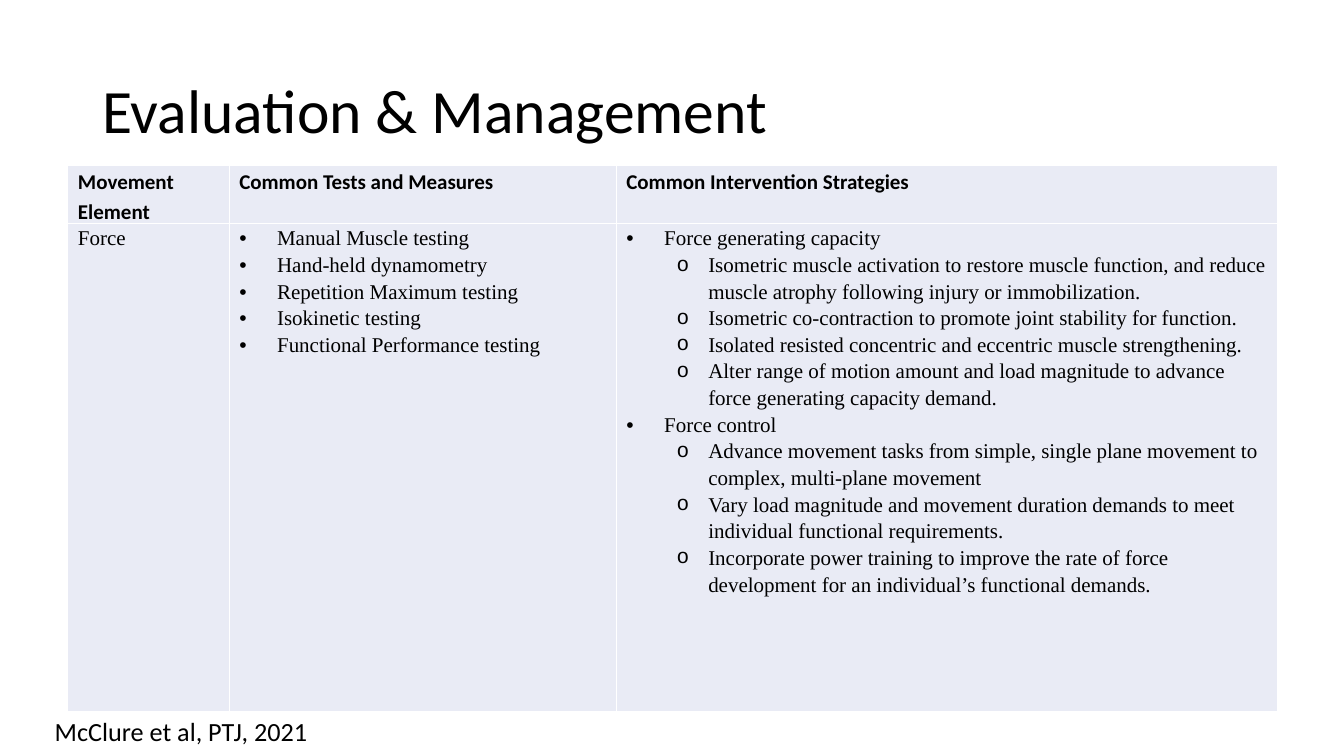
import dataclasses

import lxml.etree
import pptx
import pptx.dml.color
import pptx.enum.text
import pptx.oxml.ns
import pptx.util

Pt = pptx.util.Pt
BLACK = pptx.dml.color.RGBColor(0x00, 0x00, 0x00)
WHITE = pptx.dml.color.RGBColor(0xFF, 0xFF, 0xFF)
PALE_BLUE = pptx.dml.color.RGBColor(0xE9, 0xEB, 0xF5)
SANS = "Calibri"
SERIF = "Times New Roman"


@dataclasses.dataclass(frozen=True)
class Bullet:
    level: int
    symbol: str
    font: str
    margin: float
    hanging: float


@dataclasses.dataclass(frozen=True)
class Line:
    text: str
    bullet: Bullet | None = None


MAIN = Bullet(0, "•", "Arial", 27, 27)
SUB = Bullet(1, "o", "Courier New", 58.5, 22.5)

HEADINGS = ["Movement Element", "Common Tests and Measures", "Common Intervention Strategies"]
TESTS = [
    "Manual Muscle testing",
    "Hand-held dynamometry",
    "Repetition Maximum testing",
    "Isokinetic testing",
    "Functional Performance testing",
]
STRATEGIES = {
    "Force generating capacity": [
        "Isometric muscle activation to restore muscle function, and reduce muscle atrophy "
        "following injury or immobilization.",
        "Isometric co-contraction to promote joint stability for function.",
        "Isolated resisted concentric and eccentric muscle strengthening.",
        "Alter range of motion amount and load magnitude to advance force generating "
        "capacity demand.",
    ],
    "Force control": [
        "Advance movement tasks from simple, single plane movement to complex, "
        "multi-plane movement",
        "Vary load magnitude and movement duration demands to meet individual functional "
        "requirements.",
        "Incorporate power training to improve the rate of force development for an "
        "individual’s functional demands.",
    ],
}
COLUMN_WIDTHS = [115.2, 276.5, 472.3]
ROW_HEIGHTS = [41.2, 348.3]


def add_element(parent, tag: str, **attributes: str):
    element = lxml.etree.SubElement(parent, pptx.oxml.ns.qn(tag))
    for name, value in attributes.items():
        element.set(name, value)
    return element


def set_bullet(para, bullet: Bullet) -> None:
    para.level = bullet.level
    properties = para._p.get_or_add_pPr()
    properties.set("marL", str(Pt(bullet.margin)))
    properties.set("indent", str(Pt(-bullet.hanging)))
    add_element(properties, "a:buFont", typeface=bullet.font)
    add_element(properties, "a:buChar", char=bullet.symbol)


def write(frame, lines: list[Line], *, size: float, font: str = SANS,
          bold: bool = False, spacing: float = 1.0) -> None:
    """Fill a text frame with one paragraph per line."""
    for index, line in enumerate(lines):
        para = frame.add_paragraph() if index else frame.paragraphs[0]
        if line.bullet:
            set_bullet(para, line.bullet)
        para.line_spacing = spacing
        span = para.add_run()
        span.text = line.text
        span.font.size = Pt(size)
        span.font.name = font
        span.font.bold = bold
        span.font.color.rgb = BLACK


def add_text(page, text: str, left: float, top: float, width: float, height: float, *,
             size: float, spacing: float = 1.0, wrap: bool = True,
             anchor=pptx.enum.text.MSO_ANCHOR.TOP) -> None:
    box = page.shapes.add_textbox(Pt(left), Pt(top), Pt(width), Pt(height))
    box.text_frame.word_wrap = wrap
    box.text_frame.vertical_anchor = anchor
    write(box.text_frame, [Line(text)], size=size, spacing=spacing)


def style_cell(cell) -> None:
    cell.margin_left = cell.margin_right = Pt(7.2)
    cell.margin_top = cell.margin_bottom = Pt(0)
    properties = cell._tc.get_or_add_tcPr()
    for side in ("a:lnL", "a:lnR", "a:lnT", "a:lnB"):
        border = add_element(properties, side, w=str(Pt(1)))
        add_element(add_element(border, "a:solidFill"), "a:srgbClr", val=str(WHITE))
    cell.fill.solid()
    cell.fill.fore_color.rgb = PALE_BLUE


def add_force_table(page) -> None:
    strategies = []
    for topic, details in STRATEGIES.items():
        strategies.append(Line(topic, MAIN))
        strategies.extend(Line(detail, SUB) for detail in details)
    rows = [
        [[Line(heading)] for heading in HEADINGS],
        [[Line("Force")], [Line(test, MAIN) for test in TESTS], strategies],
    ]
    table = page.shapes.add_table(
        len(rows), len(HEADINGS), Pt(48.5), Pt(118.4),
        Pt(sum(COLUMN_WIDTHS)), Pt(sum(ROW_HEIGHTS))).table
    table.first_row = table.horz_banding = False
    for column, width in zip(table.columns, COLUMN_WIDTHS):
        column.width = Pt(width)
    for row_index, height in enumerate(ROW_HEIGHTS):
        table.rows[row_index].height = Pt(height)
        is_header = row_index == 0
        for column_index, lines in enumerate(rows[row_index]):
            cell = table.cell(row_index, column_index)
            style_cell(cell)
            write(cell.text_frame, lines, size=15, font=SANS if is_header else SERIF,
                  bold=is_header, spacing=1.15)


def main() -> None:
    deck = pptx.Presentation()
    deck.slide_width, deck.slide_height = Pt(960), Pt(540)
    page = deck.slides.add_slide(deck.slide_layouts[6])

    # Title
    add_text(page, "Evaluation & Management", 66, 28.75, 828, 104.4, size=44,
             spacing=0.9, anchor=pptx.enum.text.MSO_ANCHOR.MIDDLE)
    # Tests and interventions
    add_force_table(page)
    # Citation
    add_text(page, "McClure et al, PTJ, 2021", 32, 507.7, 200, 30, size=18.7, wrap=False)

    deck.save("out.pptx")


if __name__ == "__main__":
    main()
